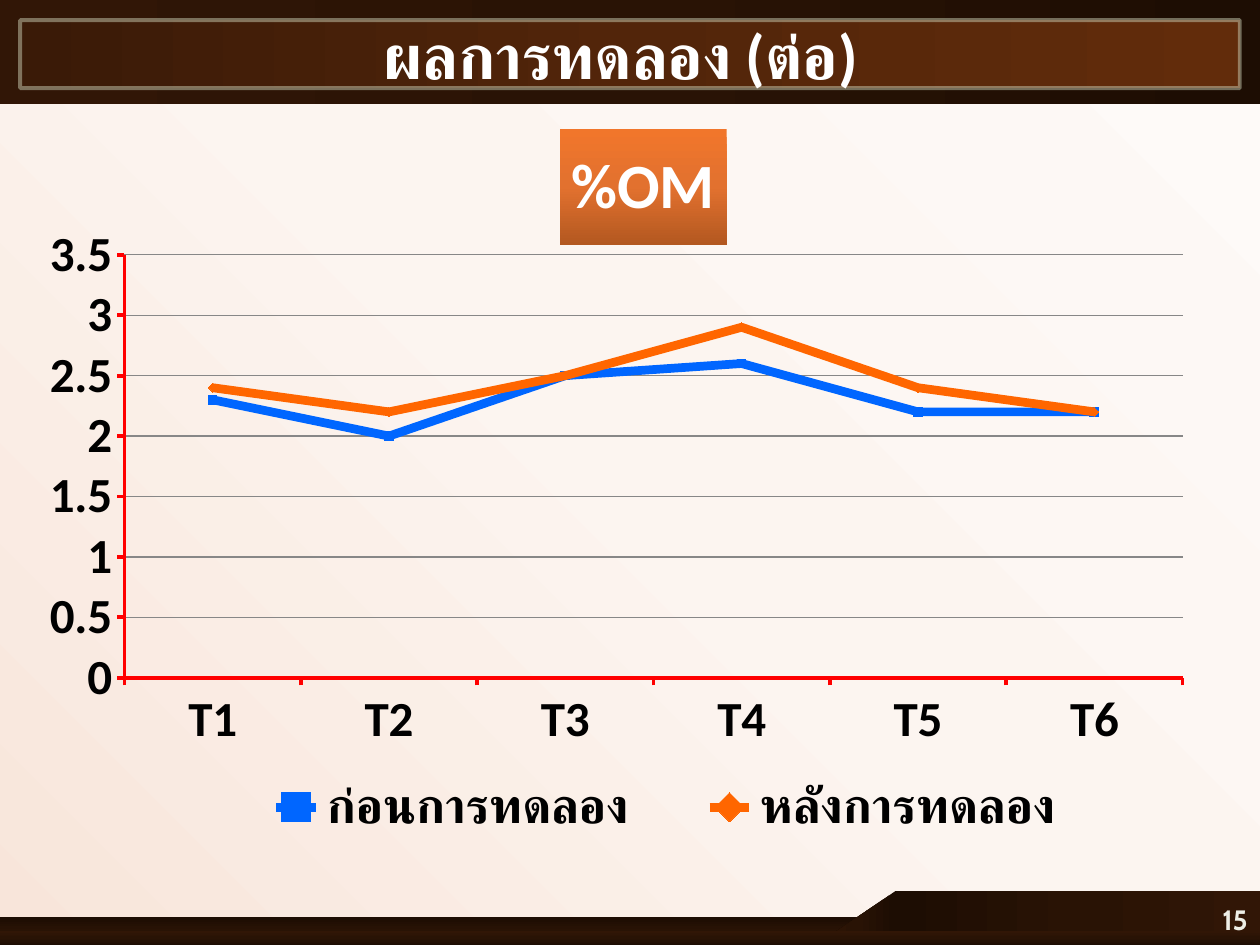
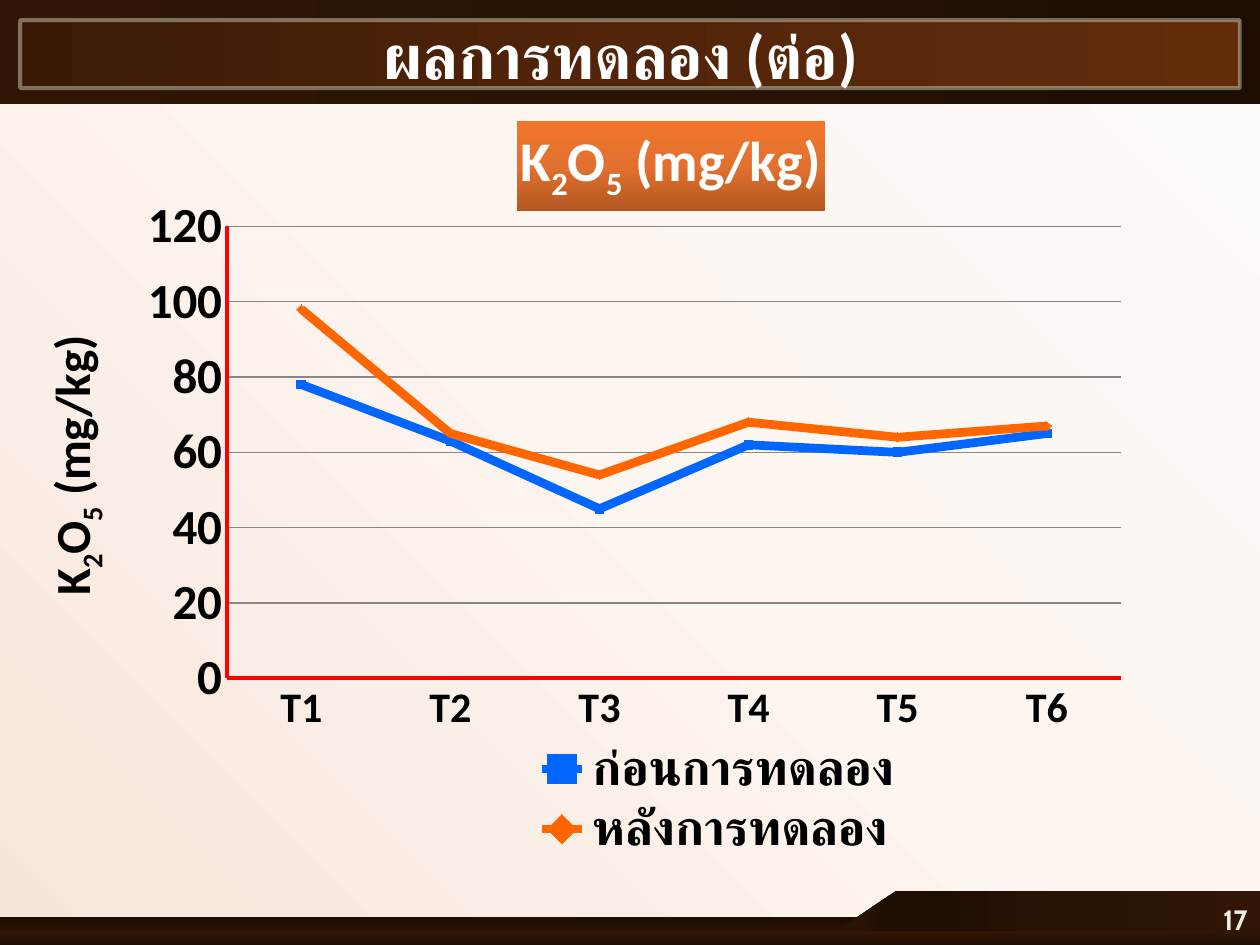
from lxml import etree
from pptx import Presentation
from pptx.chart.data import CategoryChartData
from pptx.dml.color import RGBColor
from pptx.enum.chart import XL_CHART_TYPE, XL_LEGEND_POSITION, XL_MARKER_STYLE, XL_TICK_MARK
from pptx.enum.shapes import MSO_SHAPE
from pptx.enum.text import MSO_ANCHOR, PP_ALIGN
from pptx.oxml.ns import qn
from pptx.util import Inches, Pt

LINE = XL_CHART_TYPE.LINE_MARKERS
BOTTOM, RIGHT = XL_LEGEND_POSITION.BOTTOM, XL_LEGEND_POSITION.RIGHT
OUTSIDE, NONE = XL_TICK_MARK.OUTSIDE, XL_TICK_MARK.NONE
SQUARE, DIAMOND = XL_MARKER_STYLE.SQUARE, XL_MARKER_STYLE.DIAMOND
RECT, CORNER = MSO_SHAPE.RECTANGLE, MSO_SHAPE.RIGHT_TRIANGLE
TOP, MIDDLE = MSO_ANCHOR.TOP, MSO_ANCHOR.MIDDLE
CENTER, END = PP_ALIGN.CENTER, PP_ALIGN.RIGHT

PAPER = ["FEFAF8", "FCF5F0", "F8E5DA"]
DARK = ["1D0D03", "291305", "311606"]
BROWN = ["3A1A07", "52250A", "622C0B"]
ORANGE = ["F1762B", "E2712F", "B35820"]
WHITE, BLACK, RED, GRID = "FFFFFF", "000000", "FF0000", "878787"
FONT = "Calibri"
WIDE, HIGH = 10, 7.5

GROUPS = ["T1", "T2", "T3", "T4", "T5", "T6"]
LINES = [
    ("ก่อนการทดลอง", "0066FF", SQUARE),
    ("หลังการทดลอง", "FF6600", DIAMOND),
]
POTASH = [("K", False), ("2", True), ("O", False), ("5", True), (" (mg/kg)", False)]


def color(code):
    return RGBColor.from_string(code)


def add(parent, tag, **attrs):
    return etree.SubElement(parent, qn(tag), {k: str(v) for k, v in attrs.items()})


def inches(box):
    return [Inches(n) for n in box]


def shade(fill, node, codes, angle):
    fill.gradient()
    grad = node.find(".//" + qn("a:gradFill"))
    for child in list(grad):
        grad.remove(child)
    stops = add(grad, "a:gsLst")
    for step, code in enumerate(codes):
        add(add(stops, "a:gs", pos=step * 50000), "a:srgbClr", val=code)
    add(grad, "a:lin", ang=angle * 60000, scaled=0)


def style(font, size, code, name=FONT):
    font.size, font.bold, font.name = Pt(size), True, name
    font.color.rgb = color(code)
    add(font._rPr, "a:cs", typeface=name)


def write(para, parts, size, code, name=FONT):
    for text, low in parts:
        run = para.add_run()
        run.text = text
        style(run.font, size, code, name)
        if low:
            run.font._rPr.set("baseline", "-25000")


def block(slide, box, codes, angle, kind=RECT, turn=0):
    shape = slide.shapes.add_shape(kind, *inches(box))
    shape.shadow.inherit = False
    shape.rotation = turn
    shade(shape.fill, shape._element, codes, angle)
    shape.line.fill.background()
    return shape


def header(slide, box, text):
    left, top, width, height = box
    block(slide, box, DARK, 180)
    frame = block(slide, (left + 0.16, top + 0.16, width - 0.32, height - 0.29), BROWN, 0)
    frame.line.color.rgb = color("C9CDB3")
    frame.line.width = Pt(2.25)
    add(frame.line._ln.find(".//" + qn("a:srgbClr")), "a:alpha", val=50000)
    title = slide.shapes.title
    title.left, title.top, title.width, title.height = inches(
        (left + 0.12, top + 0.08, width - 0.39, 1.31))
    slide.shapes._spTree.append(title._element)
    body = title.text_frame
    body.vertical_anchor = TOP
    para = body.paragraphs[0]
    para.alignment = CENTER
    write(para, [(text, False)], 36, WHITE)


def footer(slide, box, number):
    left, top, width, height = box
    tab = left + 7.11
    base = top + height
    block(slide, (left, base - 0.22, tab - left, 0.22), DARK, 90)
    block(slide, (tab - 0.53, top - 0.1, 0.43, 0.63), DARK, 270, CORNER, 270)
    block(slide, (tab, top, left + width - tab, 0.38), DARK, 0)
    block(slide, (left, base - 0.11, width, 0.11), DARK, 270)
    label = slide.shapes.add_textbox(*inches((left + width - 0.78, top + 0.03, 0.78, 0.4)))
    body = label.text_frame
    body.word_wrap = True
    body.vertical_anchor = MIDDLE
    para = body.paragraphs[0]
    para.alignment = END
    write(para, [(number, False)], 16, "EDEEE6", "Cabin")


def place(node, spot, index=1):
    layout = node.find(qn("c:layout"))
    if layout is None:
        layout = etree.Element(qn("c:layout"))
        node.insert(index, layout)
    for child in list(layout):
        layout.remove(child)
    manual = add(layout, "c:manualLayout")
    if index == 0:
        add(manual, "c:layoutTarget", val="inner")
    add(manual, "c:xMode", val="edge")
    add(manual, "c:yMode", val="edge")
    for key, value in zip("xywh", spot):
        add(manual, "c:" + key, val=value)


def caption(title, parts, size, code, spot):
    write(title.text_frame.paragraphs[0], parts, size, code)
    place(title._element, spot)


def rule(axis, size, tick):
    axis.major_tick_mark = tick
    axis.minor_tick_mark = NONE
    axis.format.line.color.rgb = color(RED)
    axis.format.line.width = Pt(2.25)
    style(axis.tick_labels.font, size, BLACK)


def graph(slide, box, rows, top, step, plot, name, size, spot, key, side, tick, small, label=None):
    data = CategoryChartData()
    data.categories = GROUPS
    for (text, _, _), row in zip(LINES, rows):
        data.add_series(text, row)
    chart = slide.shapes.add_chart(LINE, *inches(box), data).chart
    chart.font.name = FONT
    chart.font.size = Pt(18)
    chart.font.color.rgb = color(BLACK)

    chart.has_title = True
    title = chart.chart_title
    caption(title, name, size, WHITE, spot)
    shade(title.format.fill, title._element.find(qn("c:spPr")), ORANGE, 90)

    rule(chart.category_axis, small, tick)
    axis = chart.value_axis
    rule(axis, 28, tick)
    axis.minimum_scale, axis.maximum_scale, axis.major_unit = 0, top, step
    axis.has_major_gridlines = True
    grid = axis.major_gridlines.format.line
    grid.color.rgb = color(GRID)
    grid.width = Pt(0.75)
    if axis._element.find(qn("c:crossBetween")) is None:
        between = etree.Element(qn("c:crossBetween"))
        axis._element.find(qn("c:crosses")).addnext(between)
    axis._element.find(qn("c:crossBetween")).set("val", "between")
    if label:
        caption(axis.axis_title, label, 28, BLACK, (0.03, 0.3))
        turn = axis.axis_title.text_frame._txBody.find(qn("a:bodyPr"))
        turn.set("rot", "-5400000")
        turn.set("vert", "horz")

    chart.plots[0].vary_by_categories = False
    for series, (_, code, mark) in zip(chart.plots[0].series, LINES):
        series.smooth = False
        series.format.line.color.rgb = color(code)
        series.format.line.width = Pt(5)
        series.marker.style = mark
        series.marker.size = 5
        for part in (series.marker.format.fill, series.marker.format.line.fill):
            part.solid()
            part.fore_color.rgb = color(code)

    chart.has_legend = True
    legend = chart.legend
    legend.position = side
    legend.include_in_layout = False
    style(legend.font, 28, BLACK)
    place(legend._element, key)
    place(chart._chartSpace.find(".//" + qn("c:plotArea")), plot, 0)


def page(deck, number):
    slide = deck.slides.add_slide(deck.slide_layouts[5])
    shade(slide.background.fill, slide._element, PAPER, 135)
    footer(slide, (0, 7.07, WIDE, 0.43), number)
    header(slide, (0, 0, WIDE, 0.83), "ผลการทดลอง (ต่อ)")
    return slide


def main():
    deck = Presentation()
    deck.slide_width, deck.slide_height = Inches(WIDE), Inches(HIGH)
    graph(
        page(deck, "15"), (0, 0.84, 9.88, 6.22),
        [(2.3, 2, 2.5, 2.6, 2.2, 2.2), (2.4, 2.2, 2.5, 2.9, 2.4, 2.2)],
        3.5, 0.5, (0.1, 0.19, 0.85, 0.54),
        [("%OM", False)], 36, (0.45, 0.03),
        (0.17, 0.85, 0.73, 0.09), BOTTOM, OUTSIDE, 28)
    graph(
        page(deck, "17"), (0, 0.84, 10, 5.98),
        [(78, 63, 45, 62, 60, 65), (98, 65, 54, 68, 64, 67)],
        120, 20, (0.18, 0.16, 0.71, 0.6),
        POTASH, 32, (0.41, 0.02),
        (0.42, 0.84, 0.3, 0.18), RIGHT, NONE, 24, POTASH)
    deck.save("out.pptx")


if __name__ == "__main__":
    main()
